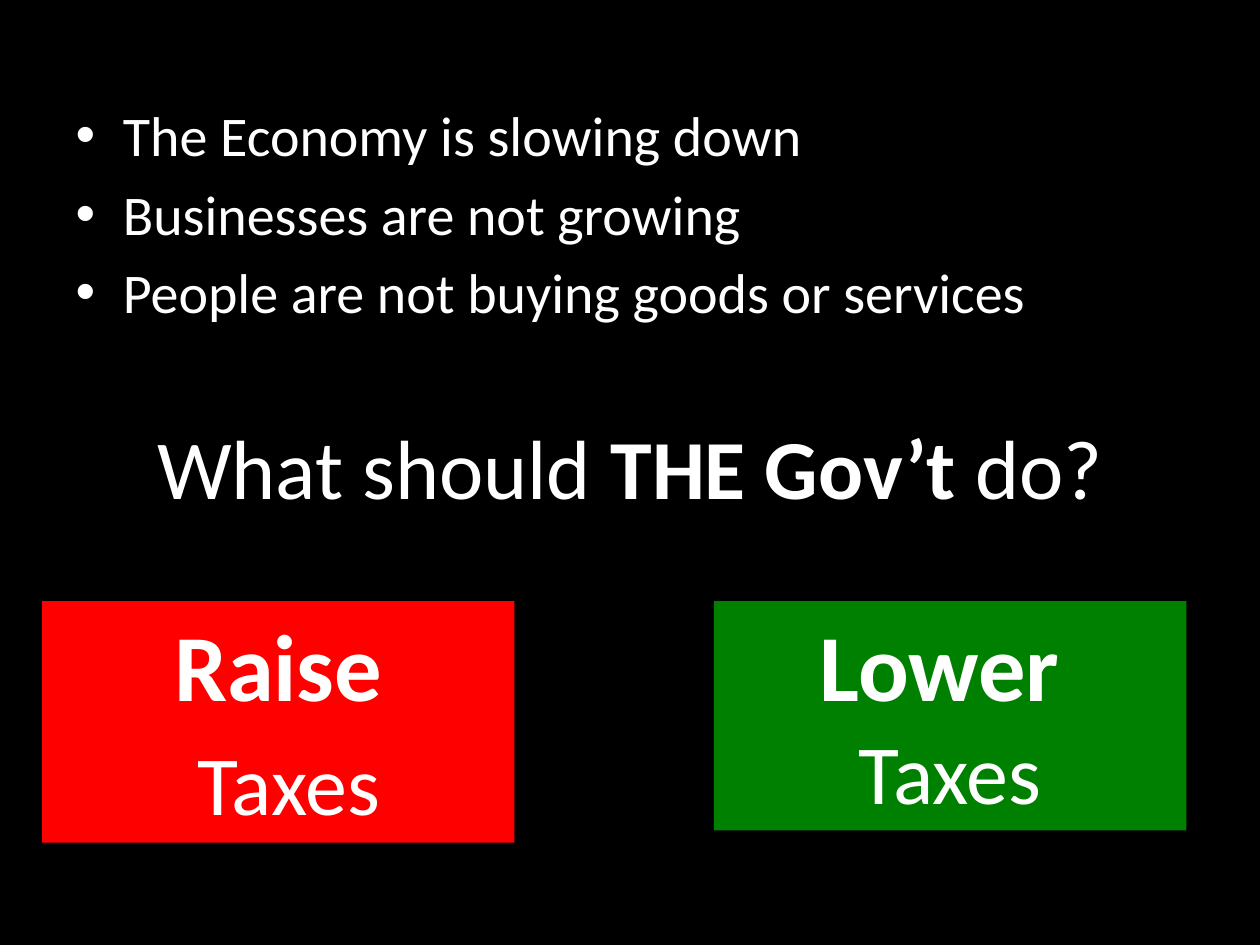
from pptx import Presentation
from pptx import util as u
from pptx.dml.color import RGBColor
from pptx.enum import shapes, text

BLACK = RGBColor(0, 0, 0)
WHITE = RGBColor(255, 255, 255)
RED = RGBColor(255, 0, 0)
GREEN = RGBColor(0, 128, 0)


def add_span(para, words, size, bold=False):
    span = para.add_run()
    span.text = words
    span.font.name = "Calibri"
    span.font.size = u.Pt(size)
    span.font.bold = bold
    span.font.color.rgb = WHITE


def fill_paragraphs(frame, paragraphs, align=None):
    for index, spans in enumerate(paragraphs):
        para = frame.add_paragraph() if index else frame.paragraphs[0]
        para.alignment = align
        for words, style in spans:
            add_span(para, words, **style)


def fill_body(page, left, top, width, height, lines):
    body = page.placeholders[1]
    body.left, body.top = u.Pt(left), u.Pt(top)
    body.width, body.height = u.Pt(width), u.Pt(height)
    body.text_frame.auto_size = text.MSO_AUTO_SIZE.NONE
    fill_paragraphs(body.text_frame, [[(line, {"size": 32})] for line in lines])


def add_question(page, left, top, width, height, spans):
    box = page.shapes.add_textbox(u.Pt(left), u.Pt(top), u.Pt(width), u.Pt(height))
    box.text_frame.word_wrap = False
    box.text_frame.auto_size = text.MSO_AUTO_SIZE.SHAPE_TO_FIT_TEXT
    fill_paragraphs(box.text_frame, [spans], text.PP_ALIGN.CENTER)


def add_choice(page, left, height, color, paragraphs):
    box = page.shapes.add_shape(
        shapes.MSO_SHAPE.RECTANGLE, u.Pt(left), u.Pt(343.5), u.Pt(270), u.Pt(height)
    )
    box.shadow.inherit = False
    box.fill.solid()
    box.fill.fore_color.rgb = color
    box.line.fill.background()
    frame = box.text_frame
    frame.word_wrap = True
    frame.vertical_anchor = text.MSO_ANCHOR.TOP
    frame.auto_size = text.MSO_AUTO_SIZE.SHAPE_TO_FIT_TEXT
    fill_paragraphs(frame, paragraphs, text.PP_ALIGN.CENTER)


def main():
    deck = Presentation()
    deck.slide_width, deck.slide_height = u.Pt(720), u.Pt(540)
    page = deck.slides.add_slide(deck.slide_layouts[1])
    page.background.fill.solid()
    page.background.fill.fore_color.rgb = BLACK
    title = page.shapes.title.element
    title.getparent().remove(title)

    fill_body(page, 36, 54, 648, 174, [
        "The Economy is slowing down",
        "Businesses are not growing",
        "People are not buying goods or services",
    ])
    plain = {"size": 48}
    strong = {"size": 54, "bold": True}
    add_question(page, 80, 234, 560, 65.5, [
        ("What should ", plain),
        ("THE Gov’t ", {"size": 48, "bold": True}),
        ("do?", plain),
    ])
    add_choice(page, 24, 138, RED, [[("Raise", strong)], [(" ", strong), ("Taxes", plain)]])
    add_choice(page, 408, 131, GREEN, [[("Lower ", strong)], [("Taxes", plain)]])
    deck.save("out.pptx")


if __name__ == "__main__":
    main()
